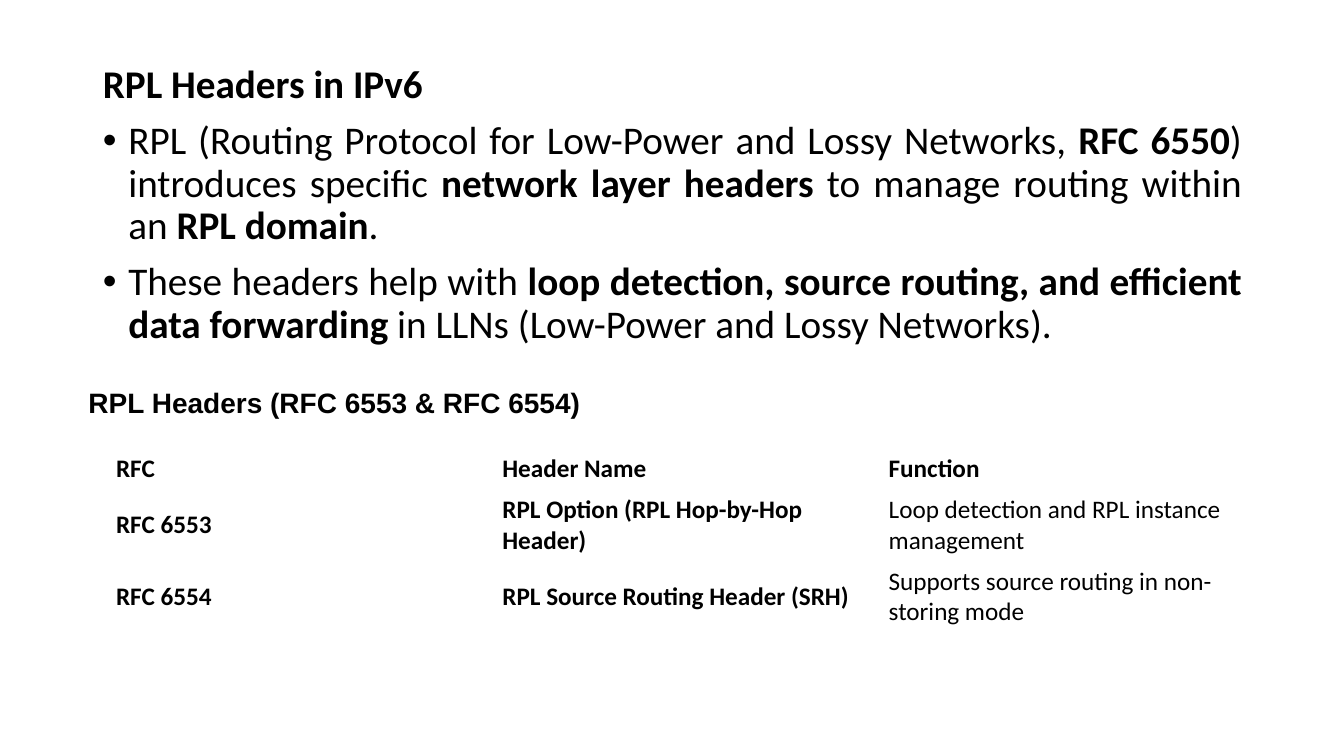
from dataclasses import dataclass

import lxml.etree
import pptx
import pptx.dml.color
import pptx.enum.text
import pptx.oxml.ns
import pptx.util

Cm = pptx.util.Cm
Pt = pptx.util.Pt


@dataclass(frozen=True)
class Theme:
    ink: str = "000000"
    body_font: str = "Calibri"
    label_font: str = "Arial"
    body_size: int = 28
    label_size: int = 20
    table_size: int = 18
    bullet_indent: float = 0.64


THEME = Theme()

HEADING = "RPL Headers in IPv6"
BULLETS = [
    [("RPL (Routing Protocol for Low-Power and Lossy Networks, ", False),
     ("RFC 6550", True),
     (") introduces specific ", False),
     ("network layer headers", True),
     (" to manage routing within an ", False),
     ("RPL domain", True),
     (". ", False)],
    [("These headers help with ", False),
     ("loop detection, source routing, and efficient data forwarding", True),
     (" in LLNs (Low-Power and Lossy Networks).", False)],
]
TABLE_LABEL = "RPL Headers (RFC 6553 & RFC 6554)"
HEADER_ROWS = [
    ["RFC", "Header Name", "Function"],
    ["RFC 6553", "RPL Option (RPL Hop-by-Hop Header)",
     "Loop detection and RPL instance management"],
    ["RFC 6554", "RPL Source Routing Header (SRH)",
     "Supports source routing in non-storing mode"],
]


def format_run(r, size, bold, font=THEME.body_font):
    r.font.name = font
    r.font.size = Pt(size)
    r.font.bold = bold
    r.font.color.rgb = pptx.dml.color.RGBColor.from_string(THEME.ink)


def set_bullet(p, char):
    pPr = p._p.get_or_add_pPr()
    indent = Cm(THEME.bullet_indent)
    pPr.set("marL", str(indent))
    pPr.set("indent", str(-indent))
    qn = pptx.oxml.ns.qn
    if char:
        lxml.etree.SubElement(pPr, qn("a:buFont")).set("typeface", THEME.label_font)
        lxml.etree.SubElement(pPr, qn("a:buChar")).set("char", char)
    else:
        lxml.etree.SubElement(pPr, qn("a:buNone"))


def add_body(sp, left, top, width, height):
    sp.left, sp.top, sp.width, sp.height = Cm(left), Cm(top), Cm(width), Cm(height)
    tf = sp.text_frame
    tf.word_wrap = True
    tf.auto_size = pptx.enum.text.MSO_AUTO_SIZE.NONE
    tf.vertical_anchor = pptx.enum.text.MSO_ANCHOR.TOP
    for i, parts in enumerate([[(HEADING, True)]] + BULLETS):
        p = tf.add_paragraph() if i else tf.paragraphs[0]
        p.alignment = pptx.enum.text.PP_ALIGN.JUSTIFY
        p.line_spacing = 0.9
        p.space_before = Pt(10)
        set_bullet(p, "•" if i else None)
        for text, bold in parts:
            r = p.add_run()
            r.text = text
            format_run(r, THEME.body_size, bold)


def add_label(s, left, top, width, height):
    sp = s.shapes.add_textbox(Cm(left), Cm(top), Cm(width), Cm(height))
    tf = sp.text_frame
    tf.word_wrap = False
    tf.margin_top = Cm(0.18)
    tf.text = TABLE_LABEL
    format_run(tf.paragraphs[0].runs[0], THEME.label_size, True, THEME.label_font)


def add_header_table(s, left, top, width, row_heights):
    columns = len(HEADER_ROWS[0])
    table = s.shapes.add_table(len(HEADER_ROWS), columns, Cm(left), Cm(top),
                               Cm(width), Cm(sum(row_heights))).table
    table.first_row = False
    table.horz_banding = False
    for i, texts in enumerate(HEADER_ROWS):
        table.rows[i].height = Cm(row_heights[i])
        for j, text in enumerate(texts):
            cell = table.cell(i, j)
            cell.fill.background()
            cell.vertical_anchor = pptx.enum.text.MSO_ANCHOR.MIDDLE
            cell.text_frame.text = text
            bold = i == 0 or j < columns - 1
            format_run(cell.text_frame.paragraphs[0].runs[0], THEME.table_size, bold)


def build_headers_slide(prs):
    s = prs.slides.add_slide(prs.slide_layouts[1])
    title = s.shapes.title
    title.element.getparent().remove(title.element)
    add_body(s.placeholders[1], 2.34, 1.5, 29.21, 12.09)
    add_header_table(s, 2.67, 11.3, 29.21, [1.02, 1.8, 1.8])
    add_label(s, 1.98, 9.53, 13, 1.88)


def main():
    prs = pptx.Presentation()
    prs.slide_width = Cm(33.87)
    prs.slide_height = Cm(19.05)
    build_headers_slide(prs)
    prs.save("out.pptx")


if __name__ == "__main__":
    main()
